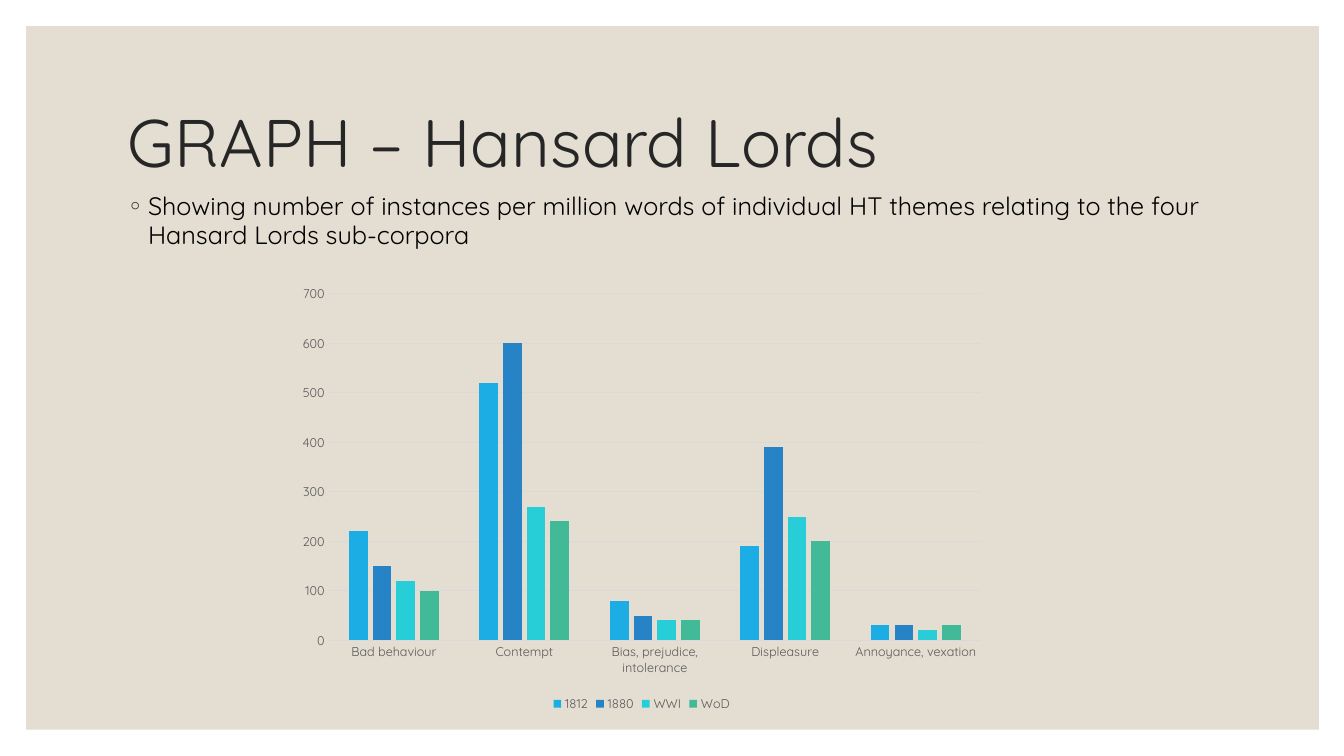
from dataclasses import dataclass

from lxml.etree import SubElement
from pptx import Presentation
from pptx.chart.axis import _BaseAxis as Axis
from pptx.chart.data import CategoryChartData
from pptx.dml.color import RGBColor
from pptx.enum.chart import XL_CHART_TYPE as ChartType
from pptx.enum.chart import XL_LEGEND_POSITION as LegendPosition
from pptx.enum.chart import XL_TICK_MARK as TickMark
from pptx.enum.shapes import MSO_SHAPE as Preset
from pptx.enum.text import MSO_ANCHOR as Anchor
from pptx.enum.text import PP_ALIGN as Align
from pptx.oxml.ns import qn
from pptx.slide import Slide
from pptx.text.text import Font, _Paragraph as Paragraph
from pptx.util import Inches, Pt

FONT = "Quicksand"
BLACK = RGBColor(0x00, 0x00, 0x00)
CHARCOAL = RGBColor(0x26, 0x26, 0x26)
GREY = RGBColor(0x59, 0x59, 0x59)
PALE_GREY = RGBColor(0xD9, 0xD9, 0xD9)
SAND = RGBColor(0xE3, 0xDE, 0xD1)
SKY = RGBColor(0x1C, 0xAD, 0xE4)
BLUE = RGBColor(0x26, 0x83, 0xC6)
TURQUOISE = RGBColor(0x27, 0xCE, 0xD7)
GREEN = RGBColor(0x42, 0xBA, 0x97)


@dataclass(frozen=True)
class SubCorpus:
    name: str
    rates: tuple[int, ...]
    color: RGBColor


@dataclass(frozen=True)
class Passage:
    text: str
    top: float
    height: float
    size: int
    color: RGBColor
    anchor: Anchor
    line_spacing: float


THEMES = (
    "Bad behaviour",
    "Contempt",
    "Bias, prejudice, intolerance",
    "Displeasure",
    "Annoyance, vexation",
)
SUB_CORPORA = (
    SubCorpus("1812", (220, 520, 80, 190, 30), SKY),
    SubCorpus("1880", (150, 600, 50, 390, 30), BLUE),
    SubCorpus("WWI", (120, 270, 40, 250, 20), TURQUOISE),
    SubCorpus("WoD", (100, 240, 40, 200, 30), GREEN),
)
HEADING = Passage("GRAPH – Hansard Lords", 0.7, 1.5, 48, CHARCOAL, Anchor.MIDDLE, 0.9)
SUMMARY = Passage(
    "Showing number of instances per million words of individual HT themes "
    "relating to the four Hansard Lords sub-corpora",
    1.86, 0.8, 18, BLACK, Anchor.TOP, 0.95,
)


def style_font(font: Font, size: int, color: RGBColor) -> None:
    font.name = FONT
    font.size = Pt(size)
    font.color.rgb = color


def add_backdrop(slide: Slide) -> None:
    backdrop = slide.shapes.add_shape(
        Preset.RECTANGLE, Inches(0.26), Inches(0.26), Inches(12.82), Inches(6.98)
    )
    backdrop.shadow.inherit = False
    backdrop.fill.solid()
    backdrop.fill.fore_color.rgb = SAND
    backdrop.line.fill.background()


def add_passage(slide: Slide, passage: Passage) -> Paragraph:
    frame = slide.shapes.add_textbox(
        Inches(1.17), Inches(passage.top), Inches(11), Inches(passage.height)
    ).text_frame
    frame.word_wrap = True
    frame.vertical_anchor = passage.anchor
    paragraph = frame.paragraphs[0]
    paragraph.alignment = Align.LEFT
    paragraph.line_spacing = passage.line_spacing
    run = paragraph.add_run()
    run.text = passage.text
    style_font(run.font, passage.size, passage.color)
    return paragraph


def add_bullet(paragraph: Paragraph) -> None:
    paragraph.space_before = Pt(9)
    properties = paragraph._p.get_or_add_pPr()
    properties.set("marL", str(Inches(0.2)))
    properties.set("indent", str(Inches(-0.2)))
    bullet_color = SubElement(properties, qn("a:buClr"))
    SubElement(bullet_color, qn("a:srgbClr"), val=str(CHARCOAL))
    SubElement(properties, qn("a:buFont"), typeface=FONT)
    SubElement(properties, qn("a:buChar"), char="◦")


def style_axis(axis: Axis) -> None:
    axis.major_tick_mark = TickMark.NONE
    axis.minor_tick_mark = TickMark.NONE
    style_font(axis.tick_labels.font, 9, GREY)


def add_theme_chart(slide: Slide) -> None:
    data = CategoryChartData()
    data.categories = THEMES
    for corpus in SUB_CORPORA:
        data.add_series(corpus.name, corpus.rates)
    chart = slide.shapes.add_chart(
        ChartType.COLUMN_CLUSTERED,
        Inches(2.86), Inches(2.75), Inches(7.01), Inches(4.35), data,
    ).chart
    style_font(chart.font, 10, BLACK)
    chart.has_title = False
    chart.has_legend = True
    chart.legend.position = LegendPosition.BOTTOM
    chart.legend.include_in_layout = False
    style_font(chart.legend.font, 9, GREY)

    columns = chart.plots[0]
    columns.vary_by_categories = False
    columns.gap_width = 219
    columns.overlap = -27
    for series, corpus in zip(columns.series, SUB_CORPORA):
        series.format.fill.solid()
        series.format.fill.fore_color.rgb = corpus.color

    themes, rates = chart.category_axis, chart.value_axis
    style_axis(themes)
    style_axis(rates)
    rates.minimum_scale, rates.maximum_scale, rates.major_unit = 0, 700, 100
    rates.has_major_gridlines = True
    rates.format.line.fill.background()
    for line in (themes.format.line, rates.major_gridlines.format.line):
        line.color.rgb = PALE_GREY
        line.width = Pt(0.75)


def main() -> None:
    deck = Presentation()
    deck.slide_width = Inches(13.33)
    deck.slide_height = Inches(7.5)
    slide = deck.slides.add_slide(deck.slide_layouts[6])
    add_backdrop(slide)
    add_passage(slide, HEADING)
    add_bullet(add_passage(slide, SUMMARY))
    add_theme_chart(slide)
    deck.save("out.pptx")


if __name__ == "__main__":
    main()
